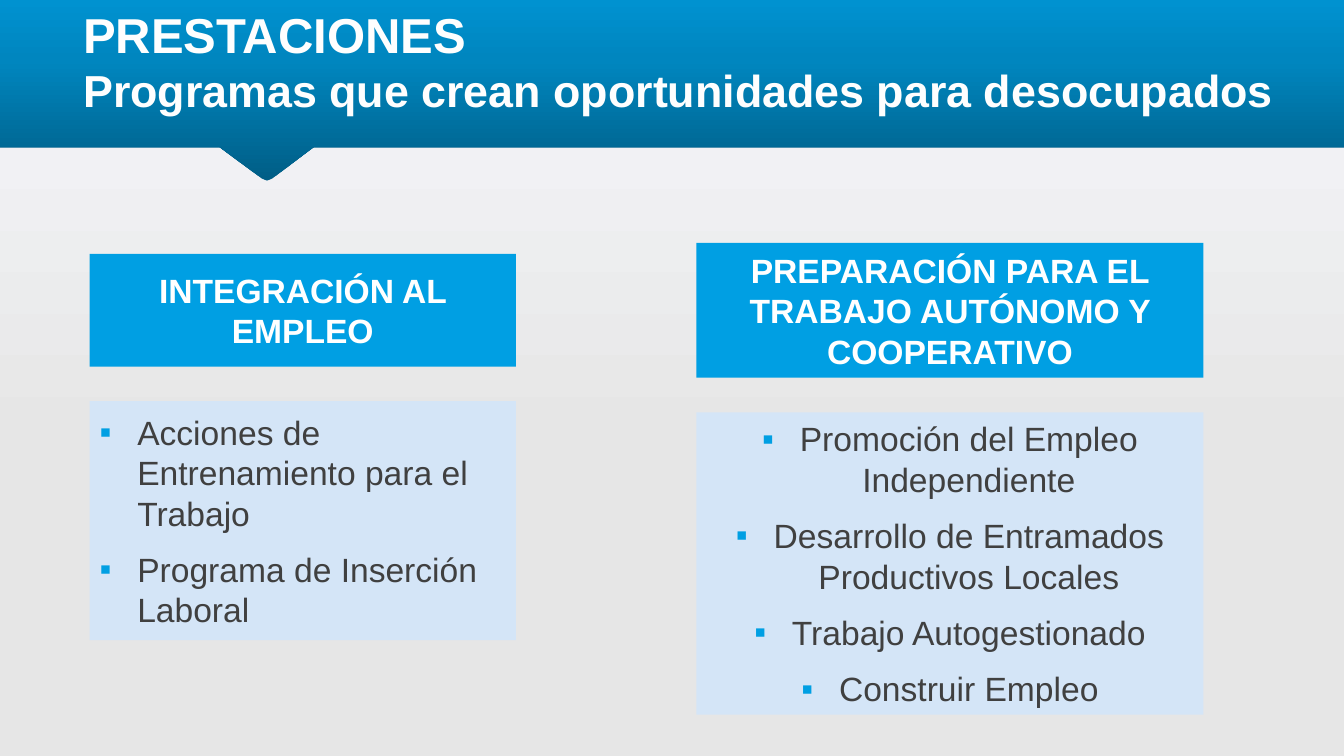
import copy

import pptx
import pptx.dml.color
import pptx.enum.shapes
import pptx.enum.text
import pptx.oxml
import pptx.oxml.ns
import pptx.util
from pptx.util import Cm, Pt

FONT = "Arial"
BLUE = "009FE3"
PALE_BLUE = "D4E5F7"
WHITE = "FFFFFF"
DARK_GREY = "404040"
SLIDE_WIDTH, SLIDE_HEIGHT = 33.87, 19.05
BAND_TOP, BAND_BOTTOM = -1.52, 3.71
CENTER = pptx.enum.text.PP_ALIGN.CENTER
LEFT = pptx.enum.text.PP_ALIGN.LEFT


def color(hex_value):
    return pptx.dml.color.RGBColor.from_string(hex_value)


def set_gradient(fill, stops, angle):
    """Apply (position, colour) stops; the angle runs counter-clockwise."""
    fill.gradient()
    fill.gradient_angle = angle
    stop_list = fill.gradient_stops[0]._element.getparent() if hasattr(
        fill.gradient_stops[0], "_element") else fill._fill._gradFill.gsLst
    while len(stop_list) < len(stops):
        stop_list.append(copy.deepcopy(stop_list[-1]))
    for gradient_stop, (position, hex_value) in zip(fill.gradient_stops, stops):
        gradient_stop.position = position
        gradient_stop.color.rgb = color(hex_value)


def set_font(font, size, hex_value, bold=False):
    font.name = FONT
    font.size = Pt(size)
    font.bold = bold
    font.color.rgb = color(hex_value)


def add_bullet(paragraph):
    properties = paragraph._p.get_or_add_pPr()
    properties.set("marL", str(Cm(0.95)))
    properties.set("indent", str(-Cm(0.95)))
    namespace = pptx.oxml.ns.nsdecls("a")
    for markup in (
        f'<a:buClr {namespace}><a:srgbClr val="{BLUE}"/></a:buClr>',
        f'<a:buFont {namespace} typeface="{FONT}"/>',
        f'<a:buChar {namespace} char="▪"/>',
    ):
        element = pptx.oxml.parse_xml(markup)
        properties.insert_element_before(element, "a:tabLst", "a:defRPr", "a:extLst")


def add_header_band(slide):
    """Draw the top band with its rounded notch pointing down."""
    outline = [
        (0, BAND_TOP), (0, BAND_BOTTOM), (5.54, BAND_BOTTOM),
        (6.6, 4.5), (6.67, 4.53), (6.73, 4.55), (6.79, 4.53), (6.86, 4.5),
        (7.9, BAND_BOTTOM), (SLIDE_WIDTH, BAND_BOTTOM),
    ]
    builder = slide.shapes.build_freeform(Cm(SLIDE_WIDTH), Cm(BAND_TOP))
    builder.add_line_segments([(Cm(x), Cm(y)) for x, y in outline])
    band = builder.convert_to_shape()
    band.shadow.inherit = False
    band.line.fill.background()
    set_gradient(band.fill, [(0, "005E86"), (0.5, "0086BF"), (1, BLUE)], 90)


def add_title(slide, lines):
    """Write (text, size) lines as one paragraph."""
    box = slide.shapes.add_textbox(Cm(1.85), Cm(-0.51), Cm(30.71), Cm(4.06))
    frame = box.text_frame
    frame.word_wrap = True
    frame.vertical_anchor = pptx.enum.text.MSO_ANCHOR.MIDDLE
    paragraph = frame.paragraphs[0]
    for index, (text, size) in enumerate(lines):
        if index:
            paragraph.add_line_break()
        run = paragraph.add_run()
        run.text = text
        set_font(run.font, size, "FEFEFE", bold=True)


def add_panel(slide, left, top, width, height, fill):
    panel = slide.shapes.add_shape(
        pptx.enum.shapes.MSO_SHAPE.RECTANGLE, Cm(left), Cm(top), Cm(width), Cm(height))
    panel.shadow.inherit = False
    panel.fill.solid()
    panel.fill.fore_color.rgb = color(fill)
    panel.line.fill.background()
    panel.text_frame.word_wrap = True
    panel.text_frame.vertical_anchor = pptx.enum.text.MSO_ANCHOR.MIDDLE
    return panel.text_frame


def add_heading(slide, left, top, width, height, text):
    paragraph = add_panel(slide, left, top, width, height, BLUE).paragraphs[0]
    paragraph.text = text
    paragraph.alignment = CENTER
    set_font(paragraph.font, 24, WHITE, bold=True)


def add_program_list(slide, left, top, width, height, programs, alignment):
    frame = add_panel(slide, left, top, width, height, PALE_BLUE)
    for index, program in enumerate(programs):
        paragraph = frame.add_paragraph() if index else frame.paragraphs[0]
        paragraph.text = program
        paragraph.alignment = alignment
        paragraph.space_before = Pt(5.5)
        paragraph.space_after = Pt(6)
        set_font(paragraph.font, 24, DARK_GREY)
        add_bullet(paragraph)


def main():
    presentation = pptx.Presentation()
    presentation.slide_width = Cm(SLIDE_WIDTH)
    presentation.slide_height = Cm(SLIDE_HEIGHT)
    slide = presentation.slides.add_slide(presentation.slide_layouts[6])
    set_gradient(slide.background.fill, [(0.03, "F6F7FB"), (0.58, "E6E6E6")], 270)

    add_header_band(slide)
    add_title(slide, [
        ("PRESTACIONES", 35),
        ("Programas que crean oportunidades para desocupados", 32),
    ])

    left, width = 2.26, 10.74
    add_heading(slide, left, 6.4, width, 2.84, "INTEGRACIÓN AL EMPLEO")
    add_program_list(slide, left, 10.11, width, 6.02, [
        "Acciones de Entrenamiento para el Trabajo",
        "Programa de Inserción Laboral",
    ], LEFT)

    left, width = 17.55, 12.78
    add_heading(slide, left, 6.12, width, 3.4,
                "PREPARACIÓN PARA EL TRABAJO AUTÓNOMO Y COOPERATIVO")
    add_program_list(slide, left, 10.39, width, 7.62, [
        "Promoción del Empleo Independiente",
        "Desarrollo de Entramados Productivos Locales",
        "Trabajo Autogestionado",
        "Construir Empleo",
    ], CENTER)

    presentation.save("out.pptx")


if __name__ == "__main__":
    main()
